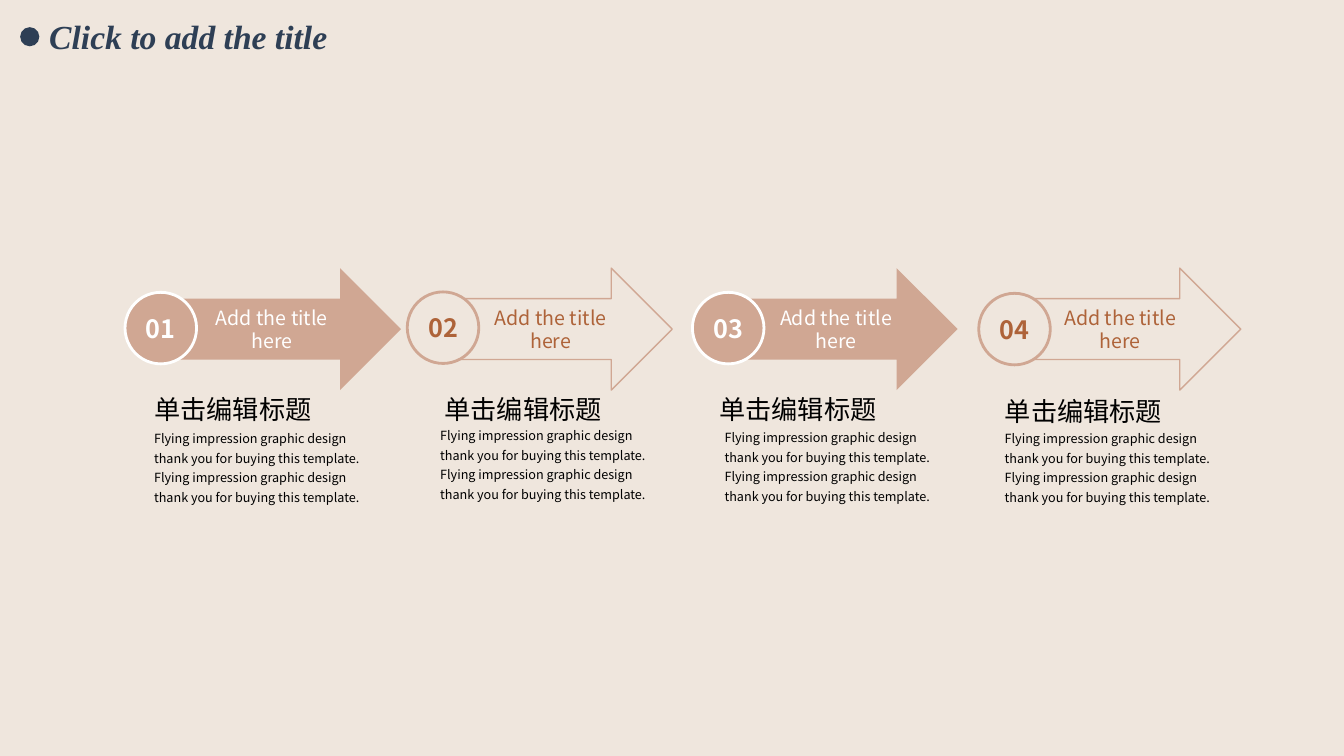
from lxml import etree
from pptx import Presentation
from pptx.dml.color import RGBColor
from pptx.enum import shapes, text
from pptx.oxml import ns
from pptx.util import Pt

COLORS = {
    "paper": "EFE6DD",
    "navy": "2E3F55",
    "clay": "D0A793",
    "rust": "AE6339",
    "white": "FFFFFF",
    "black": "000000",
}
SANS, SERIF = "Noto Sans CJK SC", "Times New Roman"
ARROW_TOP, ARROW_HEIGHT, BADGE_SIZE = 191.5, 87.1, 51.1

LABEL = "Add the title here"
HEADING = "单击编辑标题"
SENTENCE = "Flying impression graphic design thank you for buying this template."
BODY = f"{SENTENCE} {SENTENCE}"

# Each part: arrow (left, width), badge (left, top),
# heading (left, top, width), body (left, top, width, height)
STEPS = [
    ((101.5, 185), (89.3, 208.8), (81.4, 277.2, 169.9), (103, 301, 169.9, 90.7)),
    ((306, 174.2), (290.9, 208.5), (282.2, 277.2, 182.9), (307.4, 298.8, 177.1, 90.7)),
    ((509.8, 174.2), (494.6, 208.8), (481.7, 277.2, 176.4), (510.5, 300.2, 174.2, 90.7)),
    ((713.5, 172.8), (699.1, 209.5), (687.6, 278.6, 172.8), (710.6, 301, 177.1, 77)),
]


class SlideBuilder:
    def __init__(self, deck, background):
        self.page = deck.slides.add_slide(deck.slide_layouts[6])
        fill = self.page.background.fill
        fill.solid()
        fill.fore_color.rgb = self.color(background)

    def color(self, name):
        return RGBColor.from_string(COLORS[name])

    def add_words(self, frame, words, size, color, font=SANS, bold=False,
                  italic=False, centered=False, spacing=None):
        para = frame.paragraphs[0]
        para.alignment = text.PP_ALIGN.CENTER if centered else text.PP_ALIGN.LEFT
        if spacing:
            para.line_spacing = spacing
        span = para.add_run()
        span.text = words
        span.font.size = Pt(size)
        span.font.bold = bold
        span.font.italic = italic
        span.font.color.rgb = self.color(color)
        span.font.name = font
        # East Asian characters take the same typeface
        properties = span._r.get_or_add_rPr()
        etree.SubElement(properties, ns.qn("a:ea"), typeface=font)

    def text_box(self, left, top, width, height, words, size, color, **style):
        box = self.page.shapes.add_textbox(Pt(left), Pt(top), Pt(width), Pt(height))
        frame = box.text_frame
        frame.word_wrap = True
        frame.auto_size = text.MSO_AUTO_SIZE.SHAPE_TO_FIT_TEXT
        self.add_words(frame, words, size, color, **style)

    def shape(self, kind, left, top, width, height, fill, line=None, weight=1):
        shape = self.page.shapes.add_shape(
            kind, Pt(left), Pt(top), Pt(width), Pt(height))
        shape.shadow.inherit = False
        shape.fill.solid()
        shape.fill.fore_color.rgb = self.color(fill)
        if line:
            shape.line.color.rgb = self.color(line)
            shape.line.width = Pt(weight)
        else:
            shape.line.fill.background()
        return shape

    def label(self, shape, words, size, color, left=0, right=0, bold=False):
        frame = shape.text_frame
        frame.word_wrap = True
        frame.vertical_anchor = text.MSO_ANCHOR.MIDDLE
        frame.margin_left, frame.margin_right = Pt(left), Pt(right)
        frame.margin_top = frame.margin_bottom = Pt(0)
        self.add_words(frame, words, size, color, bold=bold, centered=True)

    def step(self, number, arrow, badge, heading, body):
        solid = number % 2 == 1
        fill, ink = ("clay", "white") if solid else ("paper", "rust")
        arrow_shape = self.shape(
            shapes.MSO_SHAPE.RIGHT_ARROW, arrow[0], ARROW_TOP, arrow[1],
            ARROW_HEIGHT, fill, None if solid else "clay")
        self.label(arrow_shape, LABEL, 14, ink, left=42.5, right=20.2)
        badge_shape = self.shape(
            shapes.MSO_SHAPE.OVAL, *badge, BADGE_SIZE, BADGE_SIZE, fill,
            "white" if solid else "clay", 2)
        self.label(badge_shape, f"{number:02d}", 18, ink, bold=True)
        self.text_box(*heading, 29.5, HEADING, 18.7, "black", centered=True)
        self.text_box(*body, BODY, 9, "black", spacing=1.3)


def main():
    deck = Presentation()
    deck.slide_width, deck.slide_height = Pt(960), Pt(540)
    builder = SlideBuilder(deck, "paper")

    # Title with its dot
    builder.text_box(28.1, 7.9, 226.8, 36, "Click to add the title", 24, "navy",
                     font=SERIF, bold=True, italic=True)
    builder.shape(shapes.MSO_SHAPE.OVAL, 14.4, 19.4, 13.7, 13.7, "navy")

    # Four steps, alternately solid and outlined
    for number, parts in enumerate(STEPS, start=1):
        builder.step(number, *parts)

    deck.save("out.pptx")


if __name__ == "__main__":
    main()
